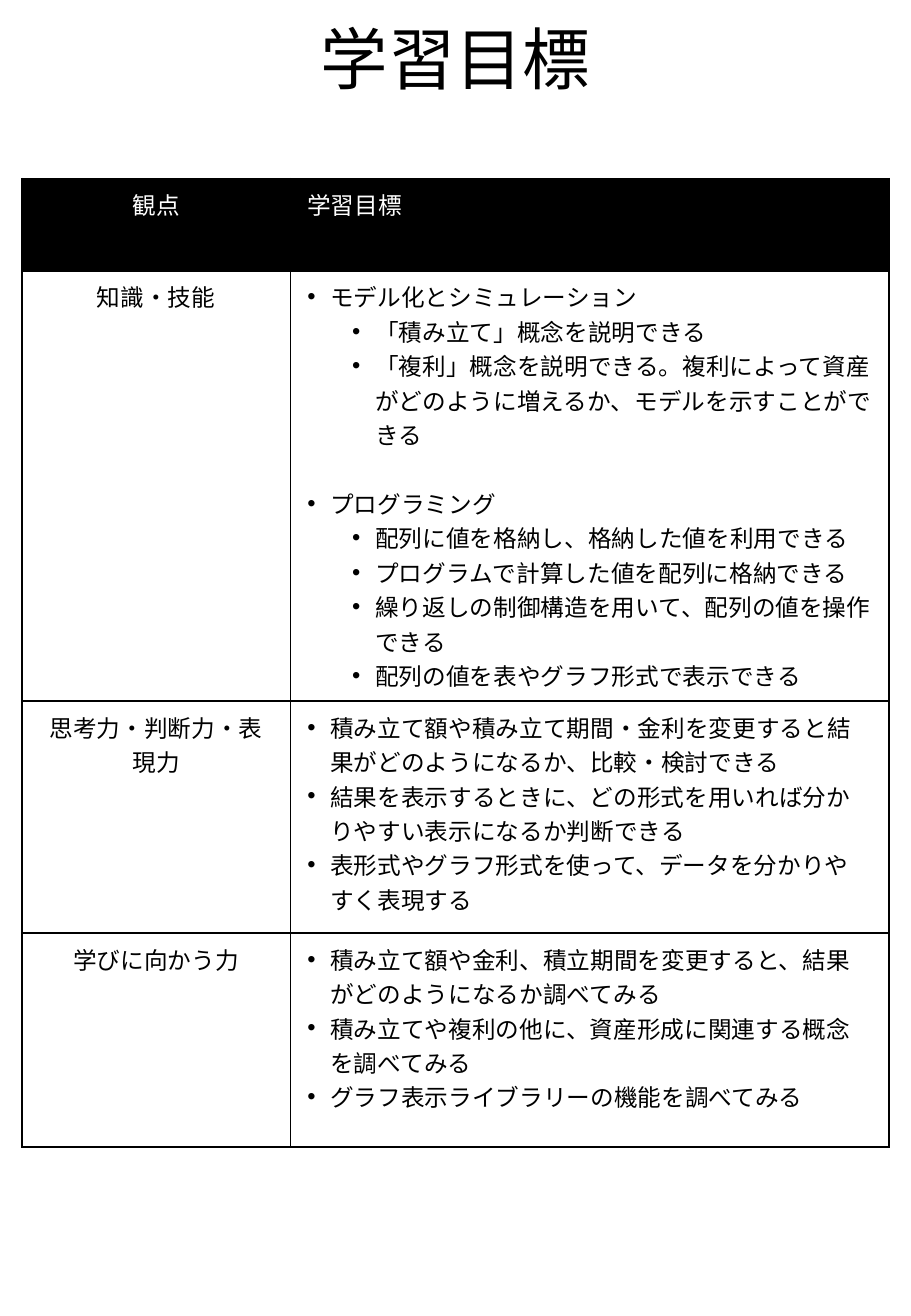
from lxml.etree import SubElement
from pptx import Presentation
from pptx.dml.color import RGBColor
from pptx.enum.text import MSO_ANCHOR, MSO_AUTO_SIZE, PP_ALIGN
from pptx.oxml import parse_xml
from pptx.oxml.ns import nsdecls, qn
from pptx.util import Inches, Pt

FONT = "Noto Sans CJK JP"
BLACK, WHITE = "000000", "FFFFFF"
COLUMN_WIDTHS = [2.21, 4.93]
ROW_HEIGHTS = [0.76, 3.5, 1.91, 1.76]
BULLET_INDENTS = [0.19, 0.56]
TOPIC_GAP = 20.3

# Each goal is (indent level, text).
HEADINGS = ["観点", "学習目標"]
GOALS = {
    "知識・技能": [
        (0, "モデル化とシミュレーション"),
        (1, "「積み立て」概念を説明できる"),
        (1, "「複利」概念を説明できる。複利によって資産がどのように増えるか、モデルを示すことができる"),
        (0, "プログラミング"),
        (1, "配列に値を格納し、格納した値を利用できる"),
        (1, "プログラムで計算した値を配列に格納できる"),
        (1, "繰り返しの制御構造を用いて、配列の値を操作できる"),
        (1, "配列の値を表やグラフ形式で表示できる"),
    ],
    "思考力・判断力・表現力": [
        (0, "積み立て額や積み立て期間・金利を変更すると結果がどのようになるか、比較・検討できる"),
        (0, "結果を表示するときに、どの形式を用いれば分かりやすい表示になるか判断できる"),
        (0, "表形式やグラフ形式を使って、データを分かりやすく表現する"),
    ],
    "学びに向かう力": [
        (0, "積み立て額や金利、積立期間を変更すると、結果がどのようになるか調べてみる"),
        (0, "積み立てや複利の他に、資産形成に関連する概念を調べてみる"),
        (0, "グラフ表示ライブラリーの機能を調べてみる"),
    ],
}


def rgb(color):
    return RGBColor.from_string(color)


def format_runs(paragraph, size, color):
    for run in paragraph.runs:
        run.font.size = Pt(size)
        run.font.bold = False
        run.font.color.rgb = rgb(color)
        run.font.name = FONT
        SubElement(run.font._element, qn("a:ea"), typeface=FONT)


def add_title(slide, text):
    title = slide.shapes.title
    title.left, title.top = Inches(0.56), Inches(0.06)
    title.width, title.height = Inches(6.38), Inches(0.81)
    text_frame = title.text_frame
    text_frame.text = text
    text_frame.word_wrap = True
    text_frame.auto_size = MSO_AUTO_SIZE.NONE
    text_frame.vertical_anchor = MSO_ANCHOR.BOTTOM
    paragraph = text_frame.paragraphs[0]
    paragraph.alignment = PP_ALIGN.CENTER
    paragraph.line_spacing = 0.9
    format_runs(paragraph, 40, BLACK)


def style_cell(cell, fill):
    cell.margin_left = cell.margin_right = Inches(0.14)
    cell.margin_top = cell.margin_bottom = Inches(0.07)
    cell.vertical_anchor = MSO_ANCHOR.TOP
    cell.fill.solid()
    cell.fill.fore_color.rgb = rgb(fill)
    properties = cell._tc.get_or_add_tcPr()
    for position, side in enumerate(["lnL", "lnR", "lnT", "lnB"]):
        border = parse_xml(
            f'<a:{side} {nsdecls("a")} w="{Pt(1)}"><a:solidFill>'
            f'<a:srgbClr val="{BLACK}"/></a:solidFill></a:{side}>')
        properties.insert(position, border)


def write_label(cell, text, color, alignment):
    cell.text_frame.text = text
    paragraph = cell.text_frame.paragraphs[0]
    paragraph.alignment = alignment
    format_runs(paragraph, 14, color)


def add_bullet(paragraph, level):
    properties = paragraph._p.get_or_add_pPr()
    properties.set("marL", str(Inches(BULLET_INDENTS[level])))
    properties.set("indent", str(-Inches(BULLET_INDENTS[0])))
    SubElement(properties, qn("a:buFont"), typeface="Arial")
    SubElement(properties, qn("a:buChar"), char="•")


def write_goals(cell, goals):
    cell.text_frame.text = "\n".join(text for _, text in goals)
    previous_level = 0
    for paragraph, (level, _) in zip(cell.text_frame.paragraphs, goals):
        paragraph.level = level
        if level < previous_level:
            paragraph.space_before = Pt(TOPIC_GAP)
        add_bullet(paragraph, level)
        format_runs(paragraph, 14, BLACK)
        previous_level = level


def add_goal_table(slide):
    table = slide.shapes.add_table(
        len(ROW_HEIGHTS), len(COLUMN_WIDTHS), Inches(0.18), Inches(1.47),
        Inches(sum(COLUMN_WIDTHS)), Inches(sum(ROW_HEIGHTS))).table
    table.first_row = table.horz_banding = False
    for column, width in zip(table.columns, COLUMN_WIDTHS):
        column.width = Inches(width)
    for index, (row, height) in enumerate(zip(table.rows, ROW_HEIGHTS)):
        row.height = Inches(height)
        for cell in row.cells:
            style_cell(cell, WHITE if index else BLACK)

    alignments = [PP_ALIGN.CENTER, PP_ALIGN.LEFT]
    for cell, text, alignment in zip(table.rows[0].cells, HEADINGS, alignments):
        write_label(cell, text, WHITE, alignment)
    for row, (viewpoint, goals) in enumerate(GOALS.items(), start=1):
        write_label(table.cell(row, 0), viewpoint, BLACK, PP_ALIGN.CENTER)
        write_goals(table.cell(row, 1), goals)


def main():
    presentation = Presentation()
    presentation.slide_width = Inches(7.5)
    presentation.slide_height = Inches(10.83)
    slide = presentation.slides.add_slide(presentation.slide_layouts[5])
    add_title(slide, "学習目標")
    add_goal_table(slide)
    presentation.save("out.pptx")


if __name__ == "__main__":
    main()
